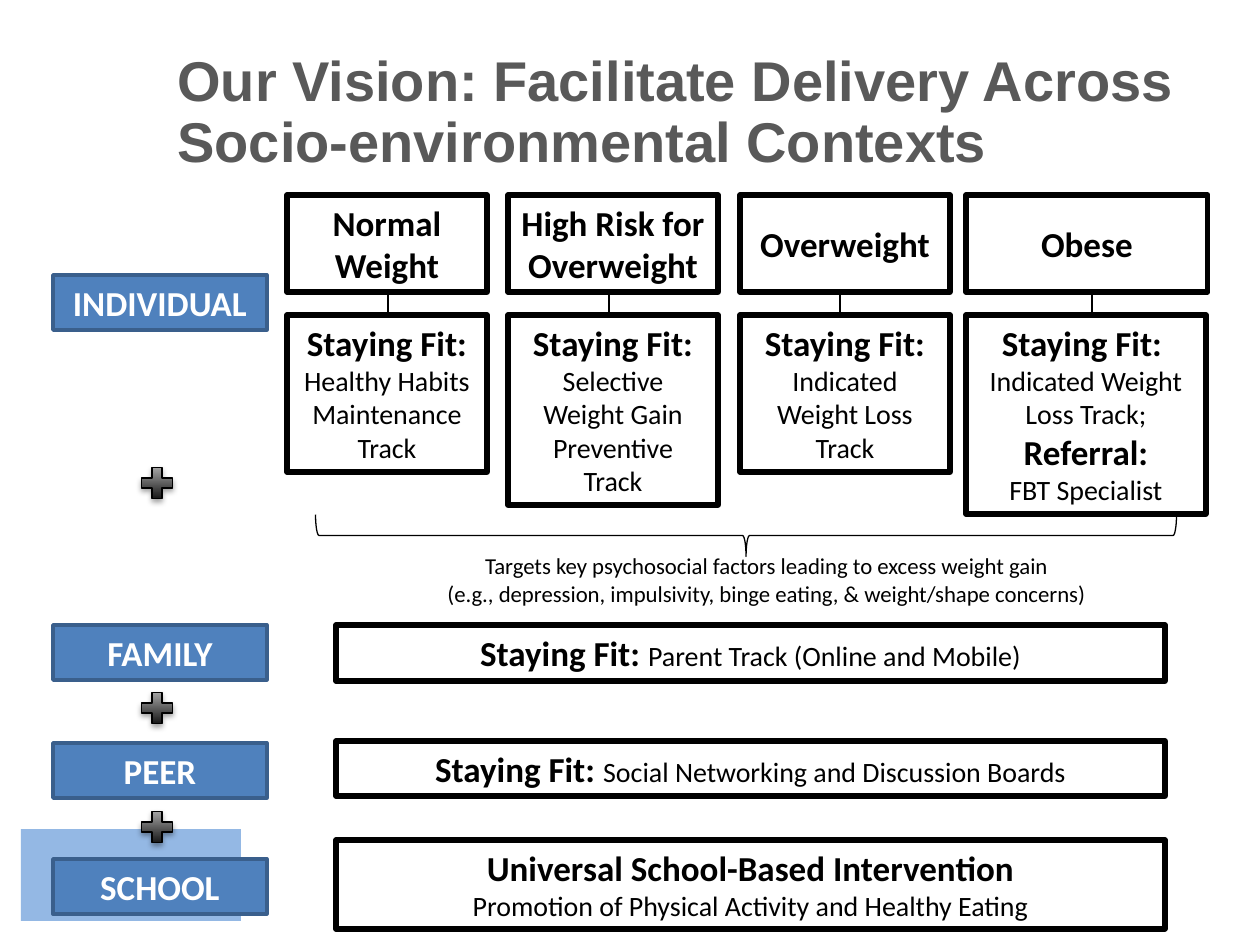
import pptx
import pptx.util
import pptx.dml.color
import pptx.enum.shapes
import pptx.enum.text
from lxml import etree
from dataclasses import dataclass

SHAPE = pptx.enum.shapes.MSO_SHAPE
ANCHOR = pptx.enum.text.MSO_ANCHOR
ALIGN = pptx.enum.text.PP_ALIGN
FIT = pptx.enum.text.MSO_AUTO_SIZE
DRAWING = "http://schemas.openxmlformats.org/drawingml/2006/main"
PX = 914400 / 126


@dataclass(frozen=True)
class Theme:
    title_font: str = "Arial"
    body_font: str = "Calibri"
    black: str = "000000"
    white: str = "FFFFFF"
    title: str = "595959"
    label: str = "4F81BD"
    label_edge: str = "3A5F8C"
    backdrop: str = "94B8E4"
    plus_light: str = "BDBDBD"
    title_size: int = 32
    strong_size: int = 20
    plain_size: int = 16
    note_size: int = 13


THEME = Theme()


def strong(text, color=THEME.black):
    return text, THEME.strong_size, True, color, THEME.body_font


def plain(text, size=THEME.plain_size):
    return text, size, False, THEME.black, THEME.body_font


FIT_LEAD = strong("Staying Fit: ")
TITLE = "Our Vision: Facilitate Delivery Across Socio-environmental Contexts"
NOTE = [
    "Targets key psychosocial factors leading to excess weight gain",
    "(e.g., depression, impulsivity, binge eating, & weight/shape concerns)",
]

# level name, top
LEVELS = [("INDIVIDUAL", 275), ("FAMILY", 625), ("PEER", 743), ("SCHOOL", 859)]
PLUS_TOPS = [462, 687, 806]

# heading, left, heading width, track width, track height, connector x, track paragraphs
WEIGHT_GROUPS = [
    ("Normal Weight", 287, 200, 200, 157, 388,
     [[FIT_LEAD, plain("Healthy Habits Maintenance Track")]]),
    ("High Risk for Overweight", 508, 210, 210, 190, 609,
     [[FIT_LEAD, plain("Selective Weight Gain Preventive Track")]]),
    ("Overweight", 740, 210, 210, 157, 840,
     [[FIT_LEAD, plain("Indicated Weight Loss Track")]]),
    ("Obese", 966, 242, 240, 199, 1092,
     [[FIT_LEAD],
      [plain("Indicated Weight Loss Track; "), strong("Referral:")],
      [plain("FBT Specialist")]]),
]

# top, height, paragraphs
WIDE_TRACKS = [
    (625, 56, [[FIT_LEAD, plain("Parent Track (Online and Mobile)")]]),
    (741, 55, [[FIT_LEAD, plain("Social Networking and Discussion Boards")]]),
    (840, 89, [[strong("Universal School-Based Intervention")],
               [plain("Promotion of Physical Activity and Healthy Eating")]]),
]


def px(*lengths):
    return [round(length * PX) for length in lengths]


def rgb(color):
    return pptx.dml.color.RGBColor.from_string(color)


def add_shape(page, kind, area, fill=None, edge=None, edge_width=0):
    shape = page.shapes.add_shape(kind, *px(*area))
    shape.shadow.inherit = False
    if fill:
        shape.fill.solid()
        shape.fill.fore_color.rgb = rgb(fill)
    else:
        shape.fill.background()
    if edge:
        shape.line.color.rgb = rgb(edge)
        shape.line.width = pptx.util.Pt(edge_width)
    else:
        shape.line.fill.background()
    return shape


def write(shape, paragraphs, anchor=ANCHOR.TOP, align=ALIGN.CENTER, spacing=None):
    frame = shape.text_frame
    frame.word_wrap = True
    frame.auto_size = FIT.NONE
    frame.vertical_anchor = anchor
    for index, spans in enumerate(paragraphs):
        para = frame.add_paragraph() if index else frame.paragraphs[0]
        para.alignment = align
        if spacing:
            para.line_spacing = spacing
        for text, size, bold, color, font in spans:
            span = para.add_run()
            span.text = text
            span.font.size = pptx.util.Pt(size)
            span.font.bold = bold
            span.font.name = font
            span.font.color.rgb = rgb(color)


def add_text(page, area, paragraphs, **style):
    write(page.shapes.add_textbox(*px(*area)), paragraphs, **style)


def add_outlined(page, area, paragraphs, anchor=ANCHOR.TOP):
    box = add_shape(page, SHAPE.RECTANGLE, area, edge=THEME.black, edge_width=3)
    write(box, paragraphs, anchor)


def add_connector(page, x, top, bottom):
    line = page.shapes.add_connector(
        pptx.enum.shapes.MSO_CONNECTOR.STRAIGHT, *px(x, top, x, bottom))
    line.line.color.rgb = rgb(THEME.black)
    line.line.width = pptx.util.Pt(1.5)
    etree.SubElement(line._element.spPr, f"{{{DRAWING}}}effectLst")


def add_plus(page, top):
    plus = add_shape(page, SHAPE.MATH_PLUS, (136, top, 42, 42),
                     edge=THEME.black, edge_width=0.75)
    plus.fill.gradient()
    plus.fill.gradient_angle = 90
    for stop, color in zip(plus.fill.gradient_stops, (THEME.black, THEME.plus_light)):
        stop.color.rgb = rgb(color)
    effects = plus._element.spPr.find(f"{{{DRAWING}}}effectLst")
    shadow = etree.SubElement(
        effects, f"{{{DRAWING}}}outerShdw", blurRad=str(pptx.util.Pt(3.1)),
        dist=str(pptx.util.Pt(1.8)), dir="5400000", rotWithShape="0")
    tone = etree.SubElement(shadow, f"{{{DRAWING}}}srgbClr", val=THEME.black)
    etree.SubElement(tone, f"{{{DRAWING}}}alpha", val="35000")


def main():
    deck = pptx.Presentation()
    deck.slide_width, deck.slide_height = px(1260, 945)
    page = deck.slides.add_slide(deck.slide_layouts[6])

    title = (TITLE, THEME.title_size, True, THEME.title, THEME.title_font)
    add_text(page, (165, 47, 1095, 117), [[title]], align=ALIGN.LEFT, spacing=0.9)

    add_shape(page, SHAPE.RECTANGLE, (21, 829, 220, 92), fill=THEME.backdrop)
    for name, top in LEVELS:
        label = add_shape(page, SHAPE.RECTANGLE, (53, top, 214, 55),
                          THEME.label, THEME.label_edge, 2)
        write(label, [[strong(name, THEME.white)]])
    for top in PLUS_TOPS:
        add_plus(page, top)

    for heading, left, width, track_width, height, x, track in WEIGHT_GROUPS:
        add_outlined(page, (left, 195, width, 97), [[strong(heading)]], ANCHOR.MIDDLE)
        add_outlined(page, (left, 315, track_width, height), track)
        add_connector(page, x, 293, 316)

    brace = add_shape(page, SHAPE.RIGHT_BRACE, (725, 105, 42, 861),
                      edge=THEME.black, edge_width=0.75)
    brace.rotation = 90
    add_text(page, (346, 546, 840, 68),
             [[plain(line, THEME.note_size)] for line in NOTE])

    for top, height, track in WIDE_TRACKS:
        add_outlined(page, (336, top, 829, height), track)

    deck.save("out.pptx")


if __name__ == "__main__":
    main()
